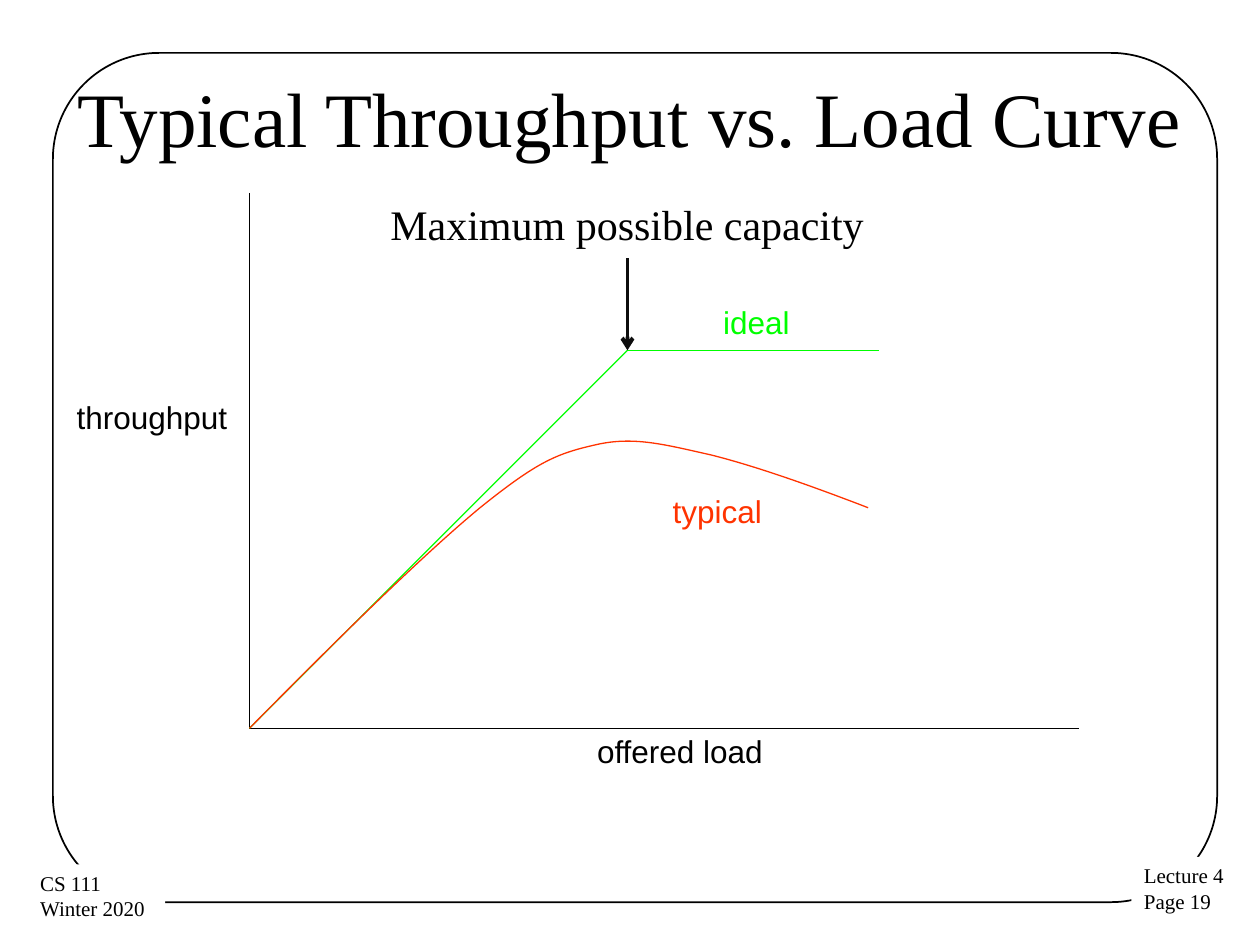
"""Build a slide that compares ideal and typical throughput under load."""
from lxml import etree
from pptx import Presentation
from pptx.dml.color import RGBColor
from pptx.enum.shapes import MSO_CONNECTOR, MSO_SHAPE
from pptx.enum.text import MSO_ANCHOR, MSO_AUTO_SIZE, PP_ALIGN
from pptx.oxml.ns import qn
from pptx.util import Inches, Pt

LINE = MSO_CONNECTOR.STRAIGHT
ROUND = MSO_SHAPE.ROUNDED_RECTANGLE
LEFT, CENTER = PP_ALIGN.LEFT, PP_ALIGN.CENTER
MIDDLE = MSO_ANCHOR.MIDDLE
FIT, FIXED = MSO_AUTO_SIZE.SHAPE_TO_FIT_TEXT, MSO_AUTO_SIZE.NONE

BLACK = RGBColor(0, 0, 0)
DARK = RGBColor(0x0D, 0x0D, 0x0D)
WHITE = RGBColor(255, 255, 255)
GREEN = RGBColor(0, 255, 0)
RED = RGBColor(255, 0x33, 0)
SERIF, SANS = "Times New Roman", "Arial"

TITLE = "Typical Throughput vs. Load Curve"
FOOTERS = [
    (["Lecture 4", "Page 19"], (8.98, 6.8, 0.85, 0.51)),
    (["CS 111", "Winter 2020"], (0.22, 6.86, 1.09, 0.51)),
]
LABELS = [
    ("throughput ", (0.44, 3.11, 1.6, 0.43), 18, SANS, BLACK, CENTER),
    ("offered load", (4.64, 5.76, 1.67, 0.43), 18, SANS, BLACK, LEFT),
    ("ideal", (5.64, 2.36, 0.79, 0.43), 18, SANS, GREEN, LEFT),
    ("typical", (5.24, 3.86, 0.99, 0.43), 18, SANS, RED, LEFT),
    ("Maximum possible capacity", (3, 1.53, 4, 0.5), 24, SERIF, BLACK, LEFT),
]
ORIGIN, KNEE = (1.98, 5.78), (4.98, 2.78)
LINES = [
    ((ORIGIN[0], 1.53), ORIGIN, BLACK),
    (ORIGIN, (8.56, ORIGIN[1]), BLACK),
    (ORIGIN, KNEE, GREEN),
    (KNEE, (KNEE[0] + 2, KNEE[1]), GREEN),
]
BENDS = [
    (2.66, 5.09), (3.35, 4.41), (3.81, 4.03),
    (4.27, 3.66), (4.42, 3.6), (4.73, 3.53),
    (5.03, 3.46), (5.28, 3.53), (5.64, 3.61),
    (6, 3.7), (6.45, 3.86), (6.89, 4.03),
]


def inches(nums):
    return [Inches(n) for n in nums]


def write(frame, rows, size, font, color, align=LEFT):
    for i, row in enumerate(rows):
        para = frame.add_paragraph() if i else frame.paragraphs[0]
        para.alignment = align
        run = para.add_run()
        run.text = row
        run.font.size = Pt(size)
        run.font.name = font
        run.font.color.rgb = color


def add_text(slide, rows, box, *style):
    shape = slide.shapes.add_textbox(*inches(box))
    frame = shape.text_frame
    frame.word_wrap = False
    frame.auto_size = FIT
    write(frame, rows, *style)
    return shape


def add_line(slide, start, end, color, width=0.75):
    line = slide.shapes.add_connector(LINE, *inches(start + end))
    line.line.color.rgb = color
    line.line.width = Pt(width)
    etree.SubElement(line._element.spPr, qn("a:effectLst"))
    return line


def add_outline(shape, color, width):
    shape.shadow.inherit = False
    shape.fill.background()
    shape.line.color.rgb = color
    shape.line.width = Pt(width)


def add_curve(slide):
    pen = slide.shapes.build_freeform(*inches(ORIGIN))
    pen.add_line_segments([inches(bend) for bend in BENDS], close=False)
    curve = pen.convert_to_shape()
    add_outline(curve, RED, 0.75)
    steps = list(curve._element.iter(qn("a:lnTo")))
    for i in range(0, len(steps), 3):
        bend = etree.SubElement(steps[i].getparent(), qn("a:cubicBezTo"))
        for step in steps[i:i + 3]:
            bend.append(step[0])
            step.getparent().remove(step)


def main():
    deck = Presentation()
    deck.slide_width, deck.slide_height = Inches(10), Inches(7.5)
    slide = deck.slides.add_slide(deck.slide_layouts[5])

    frame = slide.shapes.add_shape(ROUND, *inches((0.42, 0.42, 9.24, 6.74)))
    frame.adjustments[0] = 0.125
    add_outline(frame, BLACK, 1)
    for rows, box in FOOTERS:
        foot = add_text(slide, rows, box, 12, SERIF, BLACK)
        foot.fill.solid()
        foot.fill.fore_color.rgb = WHITE

    title = slide.shapes.title
    title.left, title.top, title.width, title.height = inches((0.5, 0.3, 9, 1.25))
    title.text_frame.auto_size = FIXED
    title.text_frame.vertical_anchor = MIDDLE
    write(title.text_frame, [TITLE], 44, SERIF, BLACK, CENTER)

    for start, end, color in LINES:
        add_line(slide, start, end, color)
    add_curve(slide)
    arrow = add_line(slide, (KNEE[0], 2.05), KNEE, DARK, 2.25)
    etree.SubElement(arrow.line._get_or_add_ln(), qn("a:tailEnd"), type="arrow")
    for text, box, *style in LABELS:
        add_text(slide, [text], box, *style)

    deck.save("out.pptx")


if __name__ == "__main__":
    main()
